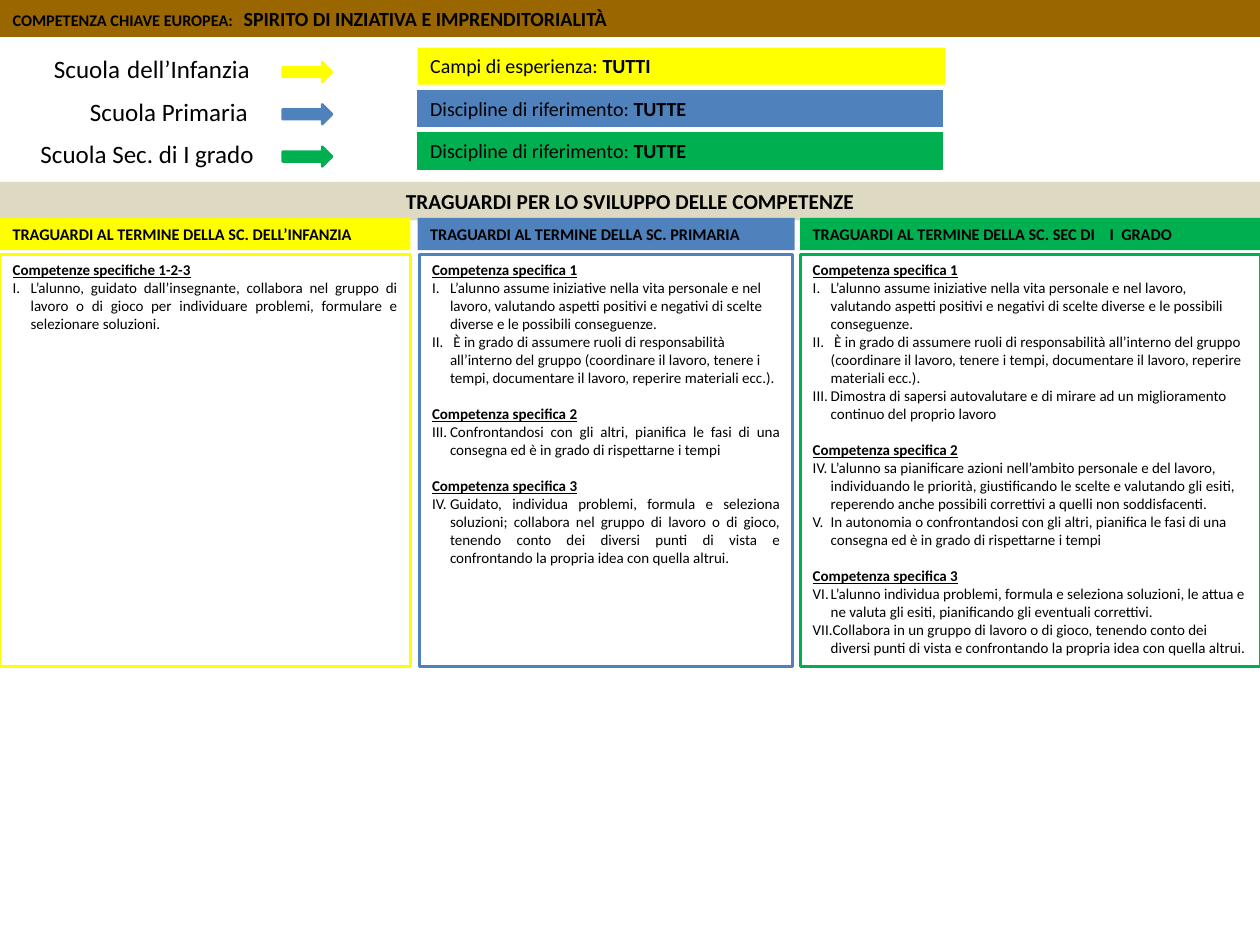
from typing import NamedTuple

from lxml import etree
from pptx import Presentation, util as u
from pptx.dml.color import RGBColor
from pptx.enum import shapes, text
from pptx.oxml.ns import qn

COLS, ROWS = 14, 10.5  # one grid cell is one inch
HUES = {"brown": "996600", "sand": "DDD9C3", "ink": "000000",
        "yellow": "FFFF00", "blue": "4F81BD", "green": "00B050"}
LEFT, MID, JUST = text.PP_ALIGN.LEFT, text.PP_ALIGN.CENTER, text.PP_ALIGN.JUSTIFY
RECT, ARROW = shapes.MSO_SHAPE.RECTANGLE, shapes.MSO_SHAPE.RIGHT_ARROW


class Box(NamedTuple):
    left: float
    top: float
    width: float
    height: float

    def cells(self) -> list:
        return [u.Inches(side) for side in self]


class Run(NamedTuple):
    words: str
    size: float
    bold: bool = False


class School(NamedTuple):
    hue: str
    left: float
    name: list
    field: str
    scope: str
    width: float
    edge: float


class Group(NamedTuple):
    head: str
    start: int
    align: int
    goals: list


class Column(NamedTuple):
    hue: str
    title: str
    left: float
    width: float
    inset: float
    groups: list


SCHOOLS = [
    School("yellow", 0.46, [Run("Scuola", 20), Run(" ", 25), Run("dell’Infanzia", 20)],
           "Campi di esperienza: ", "TUTTI", 5.86, 0),
    School("blue", 0.86, [Run("Scuola Primaria", 20)],
           "Discipline di riferimento: ", "TUTTE", 5.83, 0.75),
    School("green", 0.31, [Run("Scuola Sec. di I grado", 20)],
           "Discipline di riferimento: ", "TUTTE", 5.83, 0.75),
]
ROLES = (" È in grado di assumere ruoli di responsabilità all’interno del gruppo "
         "(coordinare il lavoro, tenere i tempi, documentare il lavoro, "
         "reperire materiali ecc.).")
DRIVE = ("L’alunno assume iniziative nella vita personale e nel lavoro, valutando "
         "aspetti positivi e negativi di scelte diverse e le possibili conseguenze.")
COLUMNS = [
    Column("yellow", "TRAGUARDI AL TERMINE DELLA SC. DELL’INFANZIA", 0, 4.56, 0, [
        Group("Competenze specifiche 1-2-3", 1, JUST, [
            "L’alunno, guidato dall’insegnante, collabora nel gruppo di lavoro o di "
            "gioco per individuare problemi, formulare e selezionare soluzioni."]),
    ]),
    Column("blue", "TRAGUARDI AL TERMINE DELLA SC. PRIMARIA", 4.64, 4.19, 0.02, [
        Group("Competenza specifica 1", 1, LEFT, [DRIVE, ROLES]),
        Group("Competenza specifica 2", 3, JUST, [
            "Confrontandosi con gli altri, pianifica le fasi di una consegna ed è in "
            "grado di rispettarne i tempi"]),
        Group("Competenza specifica 3", 4, JUST, [
            "Guidato, individua problemi, formula e seleziona soluzioni; collabora nel "
            "gruppo di lavoro o di gioco, tenendo conto dei diversi punti di vista e "
            "confrontando la propria idea con quella altrui."]),
    ]),
    Column("green", "TRAGUARDI AL TERMINE DELLA SC. SEC DI    I  GRADO", 8.89, 5.11, 0, [
        Group("Competenza specifica 1", 1, LEFT, [
            DRIVE, ROLES,
            "Dimostra di sapersi autovalutare e di mirare ad un miglioramento continuo "
            "del proprio lavoro"]),
        Group("Competenza specifica 2", 4, LEFT, [
            "L’alunno sa pianificare azioni nell’ambito personale e del lavoro, "
            "individuando le priorità, giustificando le scelte e valutando gli esiti, "
            "reperendo anche possibili correttivi a quelli non soddisfacenti.",
            "In autonomia o confrontandosi con gli altri, pianifica le fasi di una "
            "consegna ed è in grado di rispettarne i tempi"]),
        Group("Competenza specifica 3", 6, LEFT, [
            "L’alunno individua problemi, formula e seleziona soluzioni, le attua e ne "
            "valuta gli esiti, pianificando gli eventuali correttivi.",
            "Collabora in un gruppo di lavoro o di gioco, tenendo conto dei diversi "
            "punti di vista e confrontando la propria idea con quella altrui."]),
    ]),
]


def color(hue: str) -> RGBColor:
    return RGBColor.from_string(HUES[hue])


def place(shape, box: Box) -> None:
    shape.left, shape.top, shape.width, shape.height = box.cells()


def paint(shape, fill: str = "", line: str = "", width: float = 0) -> None:
    if fill:
        shape.fill.solid()
        shape.fill.fore_color.rgb = color(fill)
    else:
        shape.fill.background()
    if width:
        shape.line.color.rgb = color(line)
        shape.line.width = u.Pt(width)
    else:
        shape.line.fill.background()


def frame(shape):
    """Give the text frame the slide's common margins, anchor and wrapping."""
    body = shape.text_frame
    body.margin_left = body.margin_right = u.Inches(0.14)
    body.margin_top = body.margin_bottom = u.Inches(0.07)
    body.vertical_anchor = text.MSO_ANCHOR.TOP
    body.auto_size = text.MSO_AUTO_SIZE.NONE
    body.word_wrap = True
    return body


def style(par, align: int, size: float, bold: bool, before: float = 0, number: int = 0) -> None:
    """Format a paragraph; a number makes it an item of a Roman list starting there."""
    par.alignment = align
    par.line_spacing = 1.0
    par.space_before, par.space_after = u.Pt(before), u.Pt(0)
    props = par._p.get_or_add_pPr()
    indent = u.Inches(0.2) if number else 0
    props.set("marL", str(indent))
    props.set("indent", str(-indent))
    if number:
        etree.SubElement(props, qn("a:buFont"), typeface="+mj-lt")
        etree.SubElement(props, qn("a:buAutoNum"), type="romanUcPeriod", startAt=str(number))
    else:
        etree.SubElement(props, qn("a:buNone"))
    font = par.font
    font.name, font.size, font.bold = "Calibri", u.Pt(size), bold
    font.color.rgb = color("ink")


def write(shape, runs: list, align: int = LEFT) -> None:
    par = frame(shape).paragraphs[0]
    style(par, align, runs[0].size, runs[0].bold)
    for part in runs:
        run = par.add_run()
        run.text = part.words
        if part.size != runs[0].size:
            run.font.size = u.Pt(part.size)
        if part.bold != runs[0].bold:
            run.font.bold = part.bold


def block(slide, kind: int, box: Box, fill: str, edge: float = 0):
    shape = slide.shapes.add_shape(kind, *box.cells())
    shape.shadow.inherit = False
    paint(shape, fill, fill, edge)
    return shape


def school(slide, item: School, top: float) -> None:
    rise = 0.08 if len(item.name) > 1 else 0
    label = slide.shapes.add_textbox(*Box(item.left, top - rise, 3.2, 0.48 + rise).cells())
    write(label, item.name)
    block(slide, ARROW, Box(3.14, top + 0.16, 0.55, 0.22), item.hue, 2)
    bar = block(slide, RECT, Box(4.64, top, item.width, 0.41), item.hue, item.edge)
    write(bar, [Run(item.field, 16), Run(item.scope, 16, True)])


def column(slide, item: Column, holder) -> None:
    head = block(slide, RECT, Box(item.left, 2.42, item.width, 0.36), item.hue)
    write(head, [Run(item.title, 13, True)])
    place(holder, Box(item.left + item.inset, 2.83, item.width - 2 * item.inset, 4.58))
    paint(holder, line=item.hue, width=2.25)
    body = frame(holder)
    for rank, group in enumerate(item.groups):
        par = body.add_paragraph() if rank else body.paragraphs[0]
        par.text = group.head
        style(par, LEFT, 12, True, before=14.4 if rank else 0)
        par.font.underline = True
        for goal in group.goals:
            par = body.add_paragraph()
            par.text = goal
            style(par, group.align, 12, False, number=group.start)


def main() -> None:
    deck = Presentation()
    deck.slide_width, deck.slide_height = u.Inches(COLS), u.Inches(ROWS)
    slide = deck.slides.add_slide(deck.slide_layouts.get_by_name("Comparison"))
    title, band, *lists = slide.placeholders
    place(title, Box(0, 0, COLS, 0.41))
    paint(title, "brown")
    write(title, [Run("COMPETENZA CHIAVE EUROPEA:   ", 13, True),
                  Run("SPIRITO DI INZIATIVA E IMPRENDITORIALITÀ", 16, True)])
    place(band, Box(0, 2.02, COLS, 0.43))
    paint(band, "sand")
    write(band, [Run("TRAGUARDI PER LO SVILUPPO DELLE COMPETENZE", 17, True)], MID)
    for row, item in enumerate(SCHOOLS):
        school(slide, item, 0.53 + 0.47 * row)
    for item, holder in zip(COLUMNS, lists):
        column(slide, item, holder)
    deck.save("out.pptx")


if __name__ == "__main__":
    main()
